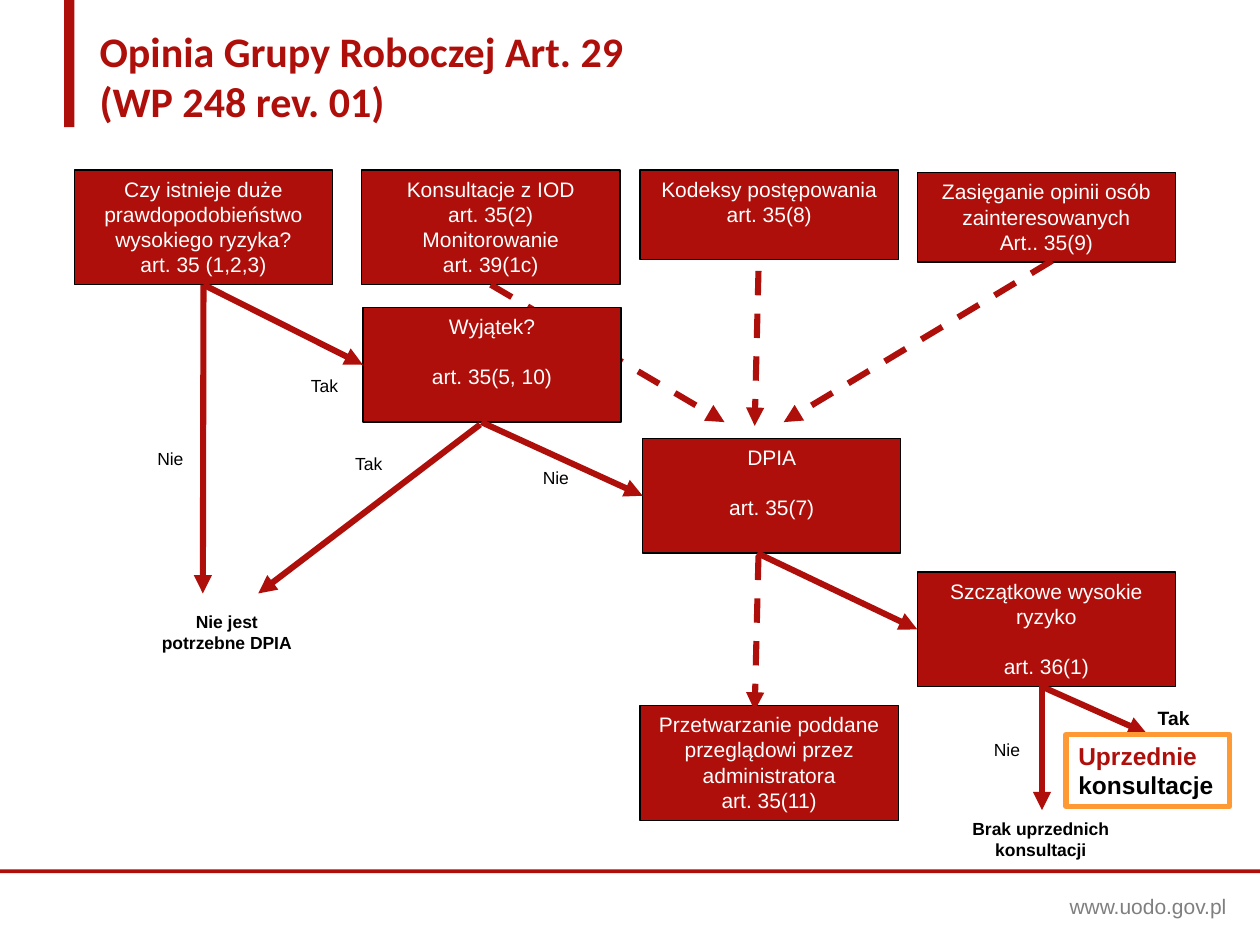
from lxml.etree import SubElement
from pptx import Presentation
from pptx.dml.color import RGBColor
from pptx.enum.dml import MSO_LINE
from pptx.enum.shapes import MSO_CONNECTOR, MSO_SHAPE
from pptx.enum.text import MSO_ANCHOR, PP_ALIGN
from pptx.oxml.ns import qn
from pptx.util import Inches, Pt

COLUMNS, ROWS = 100, 75
RED, BLACK, WHITE, ORANGE, GREY = "AE0F0A", "000000", "FFFFFF", "FF9933", "7F7F7F"
BOTTOM, LEFT = 2, 1


def color(value):
    return RGBColor.from_string(value)


class FlowSlide:
    font = "Arial"
    box_width = 20.5
    arrow_width = 3.5
    gap = Pt(14)

    def __init__(self, deck):
        self.column = deck.slide_width / COLUMNS
        self.row = deck.slide_height / ROWS
        self.slide = deck.slides.add_slide(deck.slide_layouts[5])
        self.shapes = self.slide.shapes

    def place(self, left, top, width, height):
        return (round(left * self.column), round(top * self.row),
                round(width * self.column), round(height * self.row))

    def set_text(self, shape, paragraphs, size, fill=BLACK, bold=False,
                 align=PP_ALIGN.LEFT, font=None, gap_before=None):
        frame = shape.text_frame
        frame.word_wrap = True
        frame.vertical_anchor = MSO_ANCHOR.TOP
        frame.margin_left = frame.margin_right = Inches(0.1)
        frame.margin_top = frame.margin_bottom = Inches(0.05)
        for index, runs in enumerate(paragraphs):
            paragraph = frame.paragraphs[0] if index == 0 else frame.add_paragraph()
            paragraph.alignment = align
            if index == gap_before:
                paragraph.space_before = self.gap
            for words, run_color in [(runs, fill)] if isinstance(runs, str) else runs:
                run = paragraph.add_run()
                run.text = words
                run.font.name = font or self.font
                run.font.size = Pt(size)
                run.font.bold = bold
                run.font.color.rgb = color(run_color)

    def title(self, area, lines):
        heading = self.shapes.title
        heading.left, heading.top, heading.width, heading.height = self.place(*area)
        self.set_text(heading, lines, 24, RED, True, font="Calibri")

    def rectangle(self, area, fill=None, line=None, line_width=0.75):
        shape = self.shapes.add_shape(MSO_SHAPE.RECTANGLE, *self.place(*area))
        shape.shadow.inherit = False
        if fill:
            shape.fill.solid()
            shape.fill.fore_color.rgb = color(fill)
        else:
            shape.fill.background()
        if line:
            shape.line.color.rgb = color(line)
            shape.line.width = Pt(line_width)
        else:
            shape.line.fill.background()
        return shape

    def step(self, left, top, lines, height=9.1, gap_before=None):
        box = self.rectangle((left, top, self.box_width, height), RED, BLACK)
        self.set_text(box, lines, 12, WHITE, align=PP_ALIGN.CENTER,
                      gap_before=gap_before)
        return box

    def text(self, area, words, size=10, **style):
        self.set_text(self.shapes.add_textbox(*self.place(*area)), [words], size, **style)

    def arrow(self, start, end, source=None, target=None, dashed=False):
        link = self.shapes.add_connector(
            MSO_CONNECTOR.STRAIGHT, *self.place(*start, *end))
        if source:
            link.begin_connect(source, BOTTOM)
        if target:
            link.end_connect(target, LEFT)
        link.line.color.rgb = color(RED)
        link.line.width = Pt(self.arrow_width)
        if dashed:
            link.line.dash_style = MSO_LINE.DASH
        SubElement(link.get_or_add_ln(), qn("a:tailEnd"), type="triangle")
        SubElement(link.element.spPr, qn("a:effectLst"))


def main():
    deck = Presentation()
    deck.slide_width, deck.slide_height = Inches(10), Inches(7.5)
    flow = FlowSlide(deck)

    flow.title((6.9, 1.5, 67.4, 9.1),
               ["Opinia Grupy Roboczej Art. 29", "(WP 248 rev. 01)"])
    flow.rectangle((5.1, 0, 0.8, 10.1), RED)
    flow.rectangle((0, 69, 100, 0.3), RED)
    flow.text((83.9, 70.4, 16, 3), "www.uodo.gov.pl", 12, fill=GREY)

    risk = flow.step(5.9, 13.5, [
        "Czy istnieje duże prawdopodobieństwo wysokiego ryzyka?", "art. 35 (1,2,3)"])
    consultation = flow.step(28.7, 13.5, [
        "Konsultacje z IOD", "art. 35(2)", "Monitorowanie", "art. 39(1c)"])
    flow.step(50.8, 13.5, ["Kodeksy postępowania", "art. 35(8)"], 7.1)
    flow.step(72.8, 13.7, [
        "Zasięganie opinii osób zainteresowanych", "Art.. 35(9)"], 7.1)
    flow.arrow((39, 22.6), (57.5, 33.5), source=consultation, dashed=True)
    exception = flow.step(28.8, 24.4, ["Wyjątek?", "art. 35(5, 10)"], gap_before=1)
    dpia = flow.step(51, 34.8, ["DPIA", "art. 35(7)"], gap_before=1)
    residual = flow.step(72.8, 45.4, ["Szczątkowe wysokie ryzyko", "art. 36(1)"],
                         gap_before=1)
    flow.step(50.8, 56, [
        "Przetwarzanie poddane przeglądowi przez administratora", "art. 35(11)"])

    flow.arrow((16.1, 22.6), (16.1, 47.1), source=risk)
    flow.arrow((16.1, 22.6), (28.8, 29), source=risk, target=exception)
    flow.arrow((38.2, 33.5), (51, 39.3), target=dpia)
    flow.arrow((60.1, 43.9), (72.8, 50.2), target=residual)
    for start, end in [((82.7, 54.5), (91, 58.2)),
                       ((38.1, 33.7), (20.5, 47.1)),
                       ((82.7, 54.3), (82.7, 64.3))]:
        flow.arrow(start, end)
    for start, end in [((60.2, 21.5), (59.9, 33.8)),
                       ((83.5, 20.7), (62.2, 33.5)),
                       ((60.2, 44.1), (59.9, 56.4))]:
        flow.arrow(start, end, dashed=True)

    for answer, left, top in [("Tak", 23.7, 29.3), ("Tak", 27.2, 35.5),
                              ("Nie", 11.5, 35.1), ("Nie", 42.1, 36.6),
                              ("Nie", 77.9, 58.2)]:
        flow.text((left, top, 4.7, 2.7), answer)
    flow.text((90.9, 55.6, 4.7, 2.9), "Tak", 11, bold=True)
    for outcome, left, top in [("Brak uprzednich konsultacji", 76.1, 64.4),
                               ("Nie jest potrzebne DPIA", 11.5, 48)]:
        flow.text((left, top, 13, 4.4), outcome, bold=True, align=PP_ALIGN.CENTER)

    prior = flow.rectangle((84.6, 58.3, 13, 5.7), line=ORANGE, line_width=3)
    flow.set_text(prior, [[("Uprzednie", RED), (" konsultacje", BLACK)]], 14, bold=True)

    deck.save("out.pptx")


if __name__ == "__main__":
    main()
